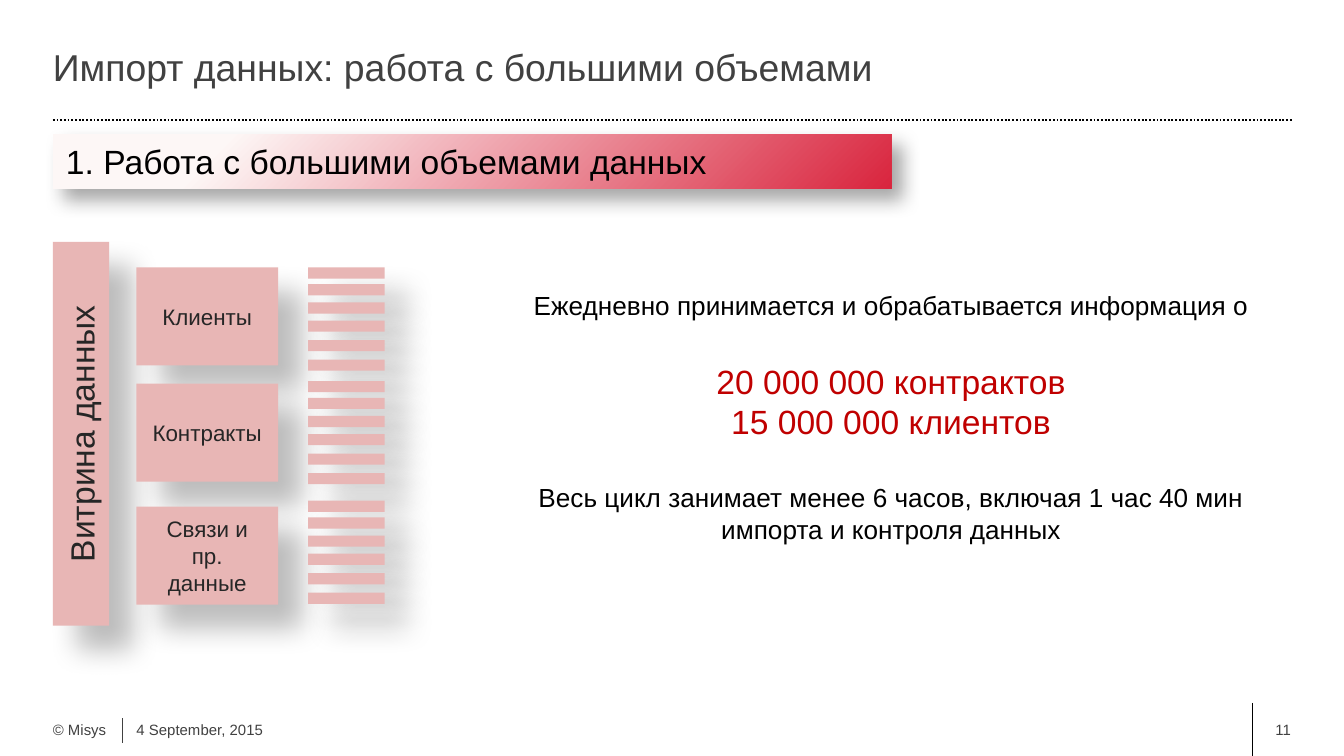
from dataclasses import dataclass
from typing import Optional

from lxml.etree import SubElement
from pptx import Presentation
from pptx.dml.color import RGBColor
from pptx.enum.dml import MSO_LINE
from pptx.enum.shapes import MSO_CONNECTOR, MSO_SHAPE
from pptx.enum.text import MSO_ANCHOR, PP_ALIGN
from pptx.oxml.ns import qn
from pptx.util import Emu, Inches, Pt

BLACK = RGBColor(0x00, 0x00, 0x00)
GREY = RGBColor(0x41, 0x41, 0x41)
DARK = RGBColor(0x26, 0x26, 0x26)
PINK = RGBColor(0xE8, 0xB6, 0xB5)
PALE = RGBColor(0xFD, 0xF7, 0xF6)
CRIMSON = RGBColor(0xD9, 0x25, 0x3E)
RED = RGBColor(0xC0, 0x00, 0x00)

# The page is a grid of square cells, 100 columns by 56.25 rows
COLUMNS, ROWS = 100, 56.25
CELL = Inches(10) / COLUMNS
LEFT, RIGHT = 3.93, 96.1


@dataclass(frozen=True)
class Area:
    column: float
    row: float
    columns: float
    rows: float

    def lengths(self) -> list[Emu]:
        return [cells(n) for n in (self.column, self.row, self.columns, self.rows)]


@dataclass(frozen=True)
class Line:
    text: str
    size: float
    color: RGBColor
    align: PP_ALIGN = PP_ALIGN.LEFT
    before: float = 0


@dataclass(frozen=True)
class Shadow:
    opacity: int
    blur: float
    distance: float


@dataclass(frozen=True)
class Rule:
    start: tuple[float, float]
    end: tuple[float, float]
    color: RGBColor
    width: float
    dash: Optional[MSO_LINE] = None


BANNER_SHADOW = Shadow(35, 10.2, 8)
BLOCK_SHADOW = Shadow(26, 15, 18)
NO_MARGINS = dict.fromkeys(
    ("margin_left", "margin_top", "margin_right", "margin_bottom"), 0
)
FLUSH = {"word_wrap": True, "vertical_anchor": MSO_ANCHOR.MIDDLE, **NO_MARGINS}
CENTRED = {"word_wrap": True, "vertical_anchor": MSO_ANCHOR.MIDDLE}
TOP = {"word_wrap": True, "vertical_anchor": MSO_ANCHOR.TOP}


def cells(count: float) -> Emu:
    return Emu(round(count * CELL))


def apply(target, values: dict) -> None:
    for name, value in values.items():
        setattr(target, name, value)


def write(box, lines: list[Line], frame_format: dict) -> None:
    frame = box.text_frame
    apply(frame, frame_format)
    for index, line in enumerate(lines):
        para = frame.add_paragraph() if index else frame.paragraphs[0]
        para.alignment = line.align
        if line.before:
            para.space_before = Pt(line.before)
        span = para.add_run()
        span.text = line.text
        apply(span.font, {"name": "Arial", "size": Pt(line.size)})
        span.font.color.rgb = line.color


def add_text(page, area: Area, lines: list[Line], frame_format: dict) -> None:
    write(page.shapes.add_textbox(*area.lengths()), lines, frame_format)


def add_block(page, area: Area, shadow: Shadow):
    block = page.shapes.add_shape(MSO_SHAPE.RECTANGLE, *area.lengths())
    block.fill.solid()
    block.fill.fore_color.rgb = PINK
    block.line.fill.background()
    # Replace the theme shadow with a soft one falling to the lower right
    block.shadow.inherit = False
    effects = block._element.spPr.find(qn("a:effectLst"))
    outer = SubElement(
        effects, qn("a:outerShdw"), blurRad=str(Pt(shadow.blur)),
        dist=str(Pt(shadow.distance)), dir=str(45 * 60000),
        algn="tl", rotWithShape="0",
    )
    color = SubElement(outer, qn("a:srgbClr"), val=str(BLACK))
    SubElement(color, qn("a:alpha"), val=str(shadow.opacity * 1000))
    return block


def add_rule(page, rule: Rule) -> None:
    points = [cells(n) for n in (*rule.start, *rule.end)]
    connector = page.shapes.add_connector(MSO_CONNECTOR.STRAIGHT, *points)
    connector.line.color.rgb = rule.color
    apply(connector.line, {"width": Pt(rule.width), "dash_style": rule.dash})
    SubElement(connector._element.spPr, qn("a:effectLst"))


def add_frame(page) -> None:
    # Rules, title and footer
    for rule in (
        Rule((93.2, 52.3), (93.2, ROWS), BLACK, 0.75),
        Rule((LEFT, 8.9), (RIGHT, 8.9), BLACK, 1, MSO_LINE.ROUND_DOT),
        Rule((9.1, 53.45), (9.1, 55.25), GREY, 0.5),
    ):
        add_rule(page, rule)
    for area, line in (
        (Area(LEFT, 2, 92.1, 5.9),
         Line("Импорт данных: работа с большими объемами", 20, GREY)),
        (Area(LEFT, 53.1, 5.2, 2.4), Line("© Misys", 8, GREY)),
        (Area(10.15, 53.1, 16.1, 2.4), Line("4 September, 2015", 8, GREY)),
        (Area(93.15, 52.35, 2.9, 3.9), Line("11", 8, GREY, PP_ALIGN.RIGHT)),
    ):
        add_text(page, area, [line], FLUSH)


def add_banner(page) -> None:
    banner = add_block(page, Area(LEFT, 10, 62.4, 4.04), BANNER_SHADOW)
    banner.fill.gradient()
    banner.fill.gradient_angle = 315
    stops = ((0.2, PALE), (1, CRIMSON))
    for stop, (position, color) in zip(banner.fill.gradient_stops, stops):
        stop.position = position
        stop.color.rgb = color
    write(banner, [Line("1. Работа с большими объемами данных", 18, BLACK)], TOP)


def add_data_mart(page) -> None:
    # Upright bar
    bar = add_block(page, Area(LEFT, 18, 4.2, 28.55), BLOCK_SHADOW)
    write(bar, [Line("Витрина данных", 18, DARK, PP_ALIGN.CENTER)], CENTRED)
    bar.text_frame._txBody.bodyPr.set("vert", "vert270")

    # Data groups
    for row, label in (
        (19.9, "Клиенты"), (28.55, "Контракты"), (37.7, "Связи и пр. данные"),
    ):
        group = add_block(page, Area(10.15, row, 10.55, 7.3), BLOCK_SHADOW)
        write(group, [Line(label, 12, DARK, PP_ALIGN.CENTER)], CENTRED)

    # Six record stripes for each group
    for first_row in (19.9, 28.35, 37.25):
        for offset in (0, 1.25, 2.6, 3.95, 5.4, 6.85):
            add_block(page, Area(22.92, first_row + offset, 5.7, 0.83), BLOCK_SHADOW)


def add_summary(page) -> None:
    middle = PP_ALIGN.CENTER
    add_text(page, Area(36.55, 21.05, 59.5, 20.2), [
        Line("Ежедневно принимается и обрабатывается информация о", 14, BLACK, middle),
        Line("20 000 000 контрактов", 18, RED, middle, before=21.5),
        Line("15 000 000 клиентов", 18, RED, middle),
        Line("Весь цикл занимает менее 6 часов, включая 1 час 40 мин "
             "импорта и контроля данных", 14, BLACK, middle, before=21.5),
    ], TOP)


def main() -> None:
    deck = Presentation()
    apply(deck, {"slide_width": cells(COLUMNS), "slide_height": cells(ROWS)})
    page = deck.slides.add_slide(deck.slide_layouts[6])
    add_frame(page)
    add_banner(page)
    add_data_mart(page)
    add_summary(page)
    deck.save("out.pptx")


if __name__ == "__main__":
    main()
